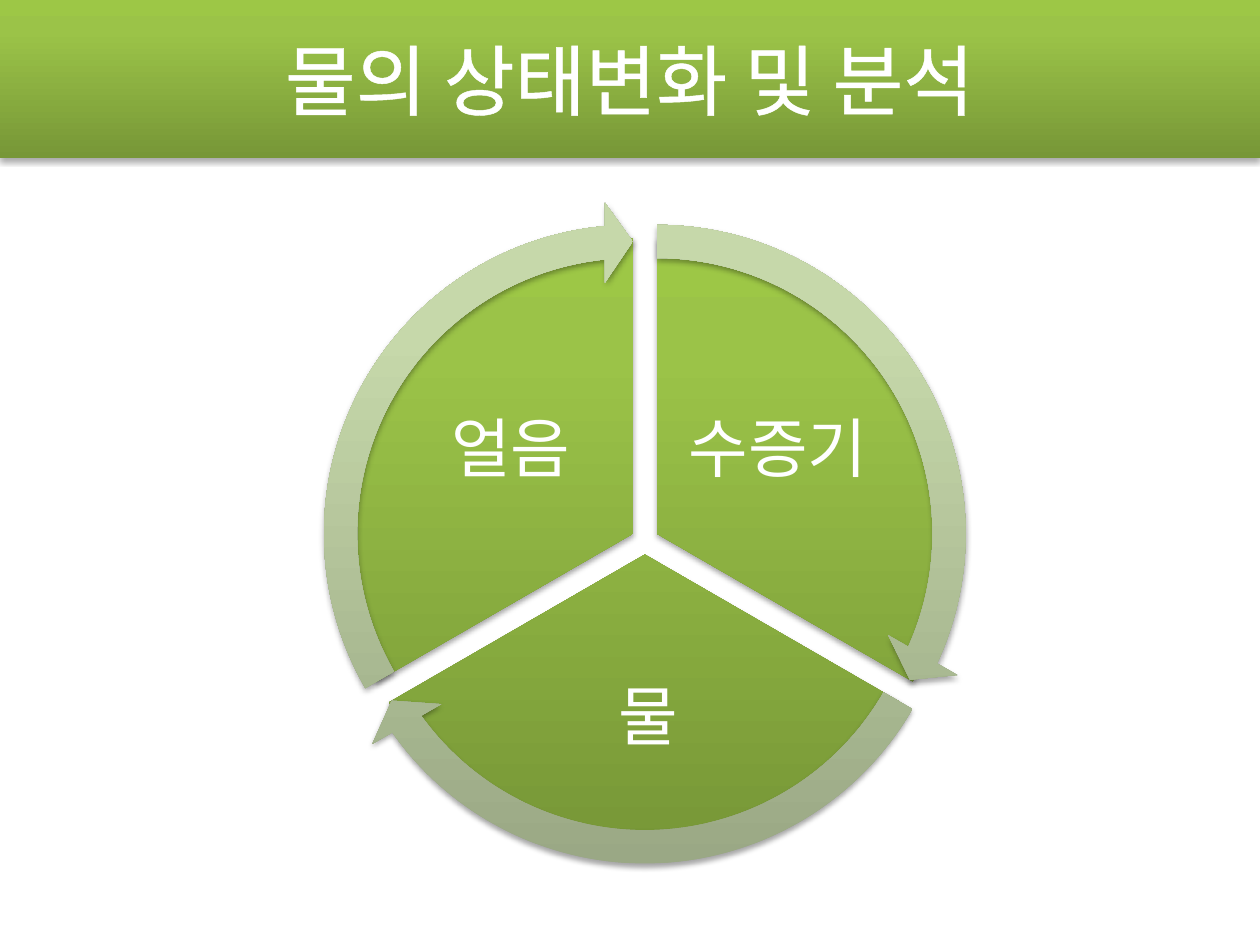
from math import cos, radians, sin

from lxml.etree import SubElement
from pptx import Presentation
from pptx.dml.color import RGBColor
from pptx.enum.shapes import MSO_SHAPE
from pptx.enum.text import MSO_ANCHOR, PP_ALIGN
from pptx.oxml import parse_xml
from pptx.oxml.ns import nsdecls, qn
from pptx.util import Cm, Pt

FONT = "Noto Sans CJK KR"
COLORS = {
    "text": "FFFFFF",
    "shadow": "000000",
    "green_dark": "779737",
    "green_mid": "9BC348",
    "green_light": "9DC746",
    "pale_dark": "98A683",
    "pale_mid": "C6D8AA",
    "pale_light": "C7DAAA",
}
CENTER_X, CENTER_Y = 13.0, 10.9
SLICE_OFFSET = 0.28
PIE_DIAMETER = 11.91
ARROW_DIAMETER = 13.39
STATES = [
    ("수증기", (13.56, 7.32, 4.24, 3.56)),
    ("물", (9.88, 12.95, 6.38, 3.12)),
    ("얼음", (8.18, 7.32, 4.24, 3.56)),
]


def angle_adjustment(degrees):
    return degrees % 360 * 0.6


def add_shaded_shape(slide, preset, box, tone):
    shaded = slide.shapes.add_shape(preset, *map(Cm, box))
    shaded.line.fill.background()
    stops = "".join(
        f'<a:gs pos="{position}"><a:srgbClr val="{COLORS[tone + shade]}"/></a:gs>'
        for position, shade in ((0, "_dark"), (80000, "_mid"), (100000, "_light"))
    )
    gradient = parse_xml(
        f'<a:gradFill {nsdecls("a")} rotWithShape="1"><a:gsLst>{stops}</a:gsLst>'
        '<a:lin ang="16200000" scaled="0"/></a:gradFill>'
    )
    shadow = parse_xml(
        f'<a:effectLst {nsdecls("a")}>'
        '<a:outerShdw blurRad="40000" dist="23000" dir="5400000" rotWithShape="0">'
        f'<a:srgbClr val="{COLORS["shadow"]}"><a:alpha val="35000"/></a:srgbClr>'
        '</a:outerShdw></a:effectLst>'
    )
    properties = shaded.element.spPr
    properties.find(qn("a:prstGeom")).addnext(gradient)
    properties.append(shadow)
    return shaded


def add_label(slide, words, box, size):
    label = slide.shapes.add_textbox(*map(Cm, box))
    frame = label.text_frame
    frame.word_wrap = True
    frame.vertical_anchor = MSO_ANCHOR.MIDDLE
    frame.text = words
    paragraph = frame.paragraphs[0]
    paragraph.alignment = PP_ALIGN.CENTER
    font = paragraph.runs[0].font
    font.size = Pt(size)
    font.name = FONT
    font.color.rgb = RGBColor.from_string(COLORS["text"])
    east_asian = SubElement(paragraph.runs[0].font._element, qn("a:ea"))
    east_asian.set("typeface", FONT)
    return label


def add_title(slide):
    title = add_label(slide, "물의 상태변화 및 분석", (1.27, 0, 22.86, 3.18), 44)
    run_properties = title.text_frame.paragraphs[0].runs[0].font._element
    outline = parse_xml(
        f'<a:ln {nsdecls("a")} w="18415"><a:solidFill>'
        f'<a:srgbClr val="{COLORS["text"]}"/></a:solidFill></a:ln>'
    )
    run_properties.insert(0, outline)


def add_state_label(slide, state, box):
    label = add_label(slide, state, box, 37)
    frame = label.text_frame
    frame.margin_left = frame.margin_right = Cm(0.13)
    frame.margin_top = frame.margin_bottom = Cm(0.13)
    frame.paragraphs[0].line_spacing = 0.9


def sector_box(index, diameter):
    direction = radians(120 * index - 30)
    left = CENTER_X + SLICE_OFFSET * cos(direction) - diameter / 2
    top = CENTER_Y + SLICE_OFFSET * sin(direction) - diameter / 2
    return left, top, diameter, diameter


def add_slice(slide, index):
    box = sector_box(index, PIE_DIAMETER)
    pie = add_shaded_shape(slide, MSO_SHAPE.PIE, box, "green")
    start = 270 + 120 * index
    pie.adjustments[0] = angle_adjustment(start)
    pie.adjustments[1] = angle_adjustment(start + 120)


def add_cycle_arrow(slide, index):
    box = sector_box(index, ARROW_DIAMETER)
    arrow = add_shaded_shape(slide, MSO_SHAPE.CIRCULAR_ARROW, box, "pale")
    start = 270 + 120 * index
    values = (
        0.05,
        angle_adjustment(5.46),
        angle_adjustment(start + 114.54),
        angle_adjustment(start),
        0.06,
    )
    for position, value in enumerate(values):
        arrow.adjustments[position] = value


def main():
    presentation = Presentation()
    presentation.slide_width = Cm(25.4)
    presentation.slide_height = Cm(19.05)
    slide = presentation.slides.add_slide(presentation.slide_layouts[6])

    add_shaded_shape(slide, MSO_SHAPE.RECTANGLE, (0, 0, 25.4, 3.18), "green")
    add_title(slide)
    for index, (state, label_box) in enumerate(STATES):
        add_slice(slide, index)
        add_state_label(slide, state, label_box)
    for index in range(len(STATES)):
        add_cycle_arrow(slide, index)

    presentation.save("out.pptx")


if __name__ == "__main__":
    main()
